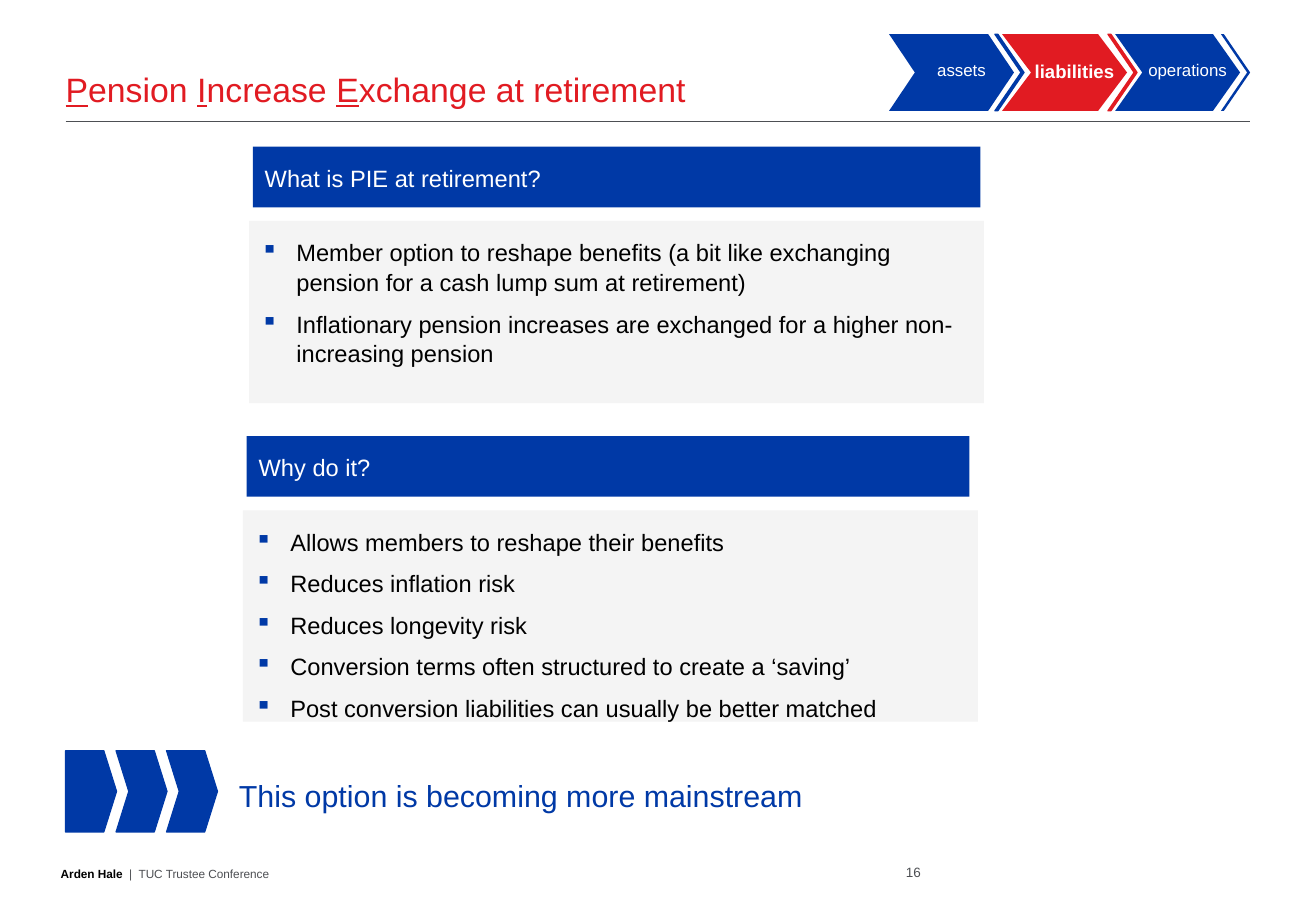
from lxml.etree import SubElement
from pptx import Presentation
from pptx.dml.color import RGBColor
from pptx.enum.shapes import MSO_CONNECTOR, MSO_SHAPE as SHAPE
from pptx.enum.text import MSO_ANCHOR as ANCHOR, PP_ALIGN as ALIGN
from pptx.oxml.ns import qn
from pptx.util import Pt

BLUE, RED, GREY, PANEL, WHITE, BLACK = "0039A6", "E11B22", "4D4F53", "F4F4F4", "FFFFFF", "000000"


def color(hex_code):
    """Return the colour for a hex string."""
    return RGBColor.from_string(hex_code)


def style(paragraph, size, hex_code, bold=False):
    """Set the font of a whole paragraph."""
    font = paragraph.font
    font.name, font.size, font.bold = "Arial", Pt(size), bold
    font.color.rgb = color(hex_code)


def set_frame(frame, anchor=ANCHOR.TOP, insets=(7.2, 3.6)):
    """Wrap a text frame and set its anchor and insets."""
    frame.word_wrap = True
    frame.vertical_anchor = anchor
    frame.margin_left = frame.margin_right = Pt(insets[0])
    frame.margin_top = frame.margin_bottom = Pt(insets[1])


def add_text(slide, box, text, size, hex_code, bold=False, align=ALIGN.LEFT, **frame_options):
    """Add a text box with one paragraph and return the paragraph."""
    frame = slide.shapes.add_textbox(*map(Pt, box)).text_frame
    set_frame(frame, **frame_options)
    paragraph = frame.paragraphs[0]
    paragraph.text, paragraph.alignment = text, align
    style(paragraph, size, hex_code, bold)
    return paragraph


def add_block(slide, kind, box, fill, point=None, outlined=False):
    """Add a filled preset shape, optionally pointed and outlined."""
    block = slide.shapes.add_shape(kind, *map(Pt, box))
    block.shadow.inherit = False
    block.fill.solid()
    block.fill.fore_color.rgb = color(fill)
    if point is not None:
        block.adjustments[0] = point
    if outlined:
        block.line.color.rgb = color(fill)
        block.line.width = Pt(0.75)
    else:
        block.line.fill.background()
    return block


def add_title(slide, box):
    """Place the title with its initials underlined, and the rule below."""
    left, top, width, height = box
    title = slide.shapes.title
    title.left, title.top, title.width, title.height = map(Pt, box)
    set_frame(title.text_frame, ANCHOR.BOTTOM, (0, 0))
    heading = title.text_frame.paragraphs[0]
    heading.alignment = ALIGN.LEFT
    for initial, rest in (("P", "ension "), ("I", "ncrease "), ("E", "xchange at retirement")):
        for text, underlined in ((initial, True), (rest, False)):
            run = heading.add_run()
            run.text, run.font.underline = text, underlined
    style(heading, 20, RED)
    rule_y = Pt(top + height + 7.2)
    rule = slide.shapes.add_connector(
        MSO_CONNECTOR.STRAIGHT, Pt(left), rule_y, Pt(left + width), rule_y)
    rule.line.color.rgb = color(GREY)
    rule.line.width = Pt(0.75)
    SubElement(rule.element.spPr, qn("a:effectLst"))


def add_tracker(slide, box):
    """Draw the three-step tracker with the current step in red."""
    left, top, width, height = box
    step = 67
    topics = (("assets", BLUE, 0.336, 10), ("liabilities", RED, 0.377, 11),
              ("operations", BLUE, 0.353, 10))
    for index, (topic, fill, point, size) in enumerate(topics):
        x = left + index * step
        add_block(slide, SHAPE.CHEVRON, (x, top, width - 2 * step - 6.4, height), fill, point)
        add_block(slide, SHAPE.CHEVRON, (x + 62.7, top, 17.3, height), fill, 0.897,
                  outlined=index < 2)
        add_text(slide, (x + 11.6, top + 11.5, 62.6, 19.6), topic, size, WHITE,
                 bold=fill == RED, align=ALIGN.CENTER, insets=(0, 3.6))


def add_section(slide, box, band_width, heading, points):
    """Draw a heading band above a panel of bullet points."""
    left, top, width, height = box
    panel_top = top + 44
    add_block(slide, SHAPE.RECTANGLE, (left, panel_top, width, height - 44), PANEL)
    add_block(slide, SHAPE.RECTANGLE, (left + 2.2, top, band_width, 36), BLUE)
    add_text(slide, (left + 2.2, top + 6.5, band_width - 55, 24), heading, 14, WHITE)
    bullets = slide.shapes.add_textbox(
        *map(Pt, (left, panel_top + 5.8, width - 8.6, height - 50))).text_frame
    set_frame(bullets)
    for index, point in enumerate(points):
        bullet = bullets.add_paragraph() if index else bullets.paragraphs[0]
        bullet.text, bullet.line_spacing = point, 1.05
        bullet.space_before = Pt(7 if index else 0)
        properties = bullet._p.get_or_add_pPr()
        properties.set("marL", str(Pt(21)))
        properties.set("indent", str(-Pt(21)))
        SubElement(SubElement(properties, qn("a:buClr")), qn("a:srgbClr"), val=BLUE)
        SubElement(properties, qn("a:buChar"), char="▪")
        style(bullet, 14, BLACK)


def add_conclusion(slide, box):
    """Draw the row of arrows and the closing statement."""
    left, top, width, height = box
    for index, kind in enumerate((SHAPE.PENTAGON, SHAPE.CHEVRON, SHAPE.CHEVRON)):
        add_block(slide, kind, (left + index * 29.9, top, 30.2, height), BLUE, 0.25, outlined=True)
    add_text(slide, (left + 95.7, top + 12.2, width - 95.7, 29),
             "This option is becoming more mainstream", 18, BLUE)


def add_footer(slide, box):
    """Write the presenter, the event and the page number."""
    left, top, width, height = box
    credit = add_text(slide, (left, top, 358.6, height), "", 7, GREY,
                      anchor=ANCHOR.BOTTOM, insets=(0, 0))
    presenter, event = credit.add_run(), credit.add_run()
    presenter.text, event.text = "Arden Hale", "  |  TUC Trustee Conference"
    presenter.font.bold = True
    presenter.font.color.rgb = color(BLACK)
    add_text(slide, (left + width - 25, top, 25, height), "16", 8, GREY,
             align=ALIGN.RIGHT, anchor=ANCHOR.BOTTOM, insets=(0, 0))


def main():
    """Build and save the slide."""
    deck = Presentation()
    deck.slide_width, deck.slide_height = Pt(780), Pt(540)
    slide = deck.slides.add_slide(deck.slide_layouts[5])
    add_title(slide, (38.9, 23.8, 702, 41))
    add_tracker(slide, (527, 20.3, 214.4, 45.4))
    add_section(slide, (147.6, 87, 435.6, 152), 431.3, "What is PIE at retirement?", (
        "Member option to reshape benefits (a bit like exchanging pension for a cash lump sum "
        "at retirement)",
        "Inflationary pension increases are exchanged for a higher non-increasing pension"))
    add_section(slide, (144, 258.5, 435.6, 169.3), 428.4, "Why do it?", (
        "Allows members to reshape their benefits",
        "Reduces inflation risk",
        "Reduces longevity risk",
        "Conversion terms often structured to create a ‘saving’",
        "Post conversion liabilities can usually be better matched"))
    add_conclusion(slide, (38.9, 445, 707.7, 48.2))
    add_footer(slide, (36, 498.2, 509.8, 23.8))
    deck.save("out.pptx")


if __name__ == "__main__":
    main()
